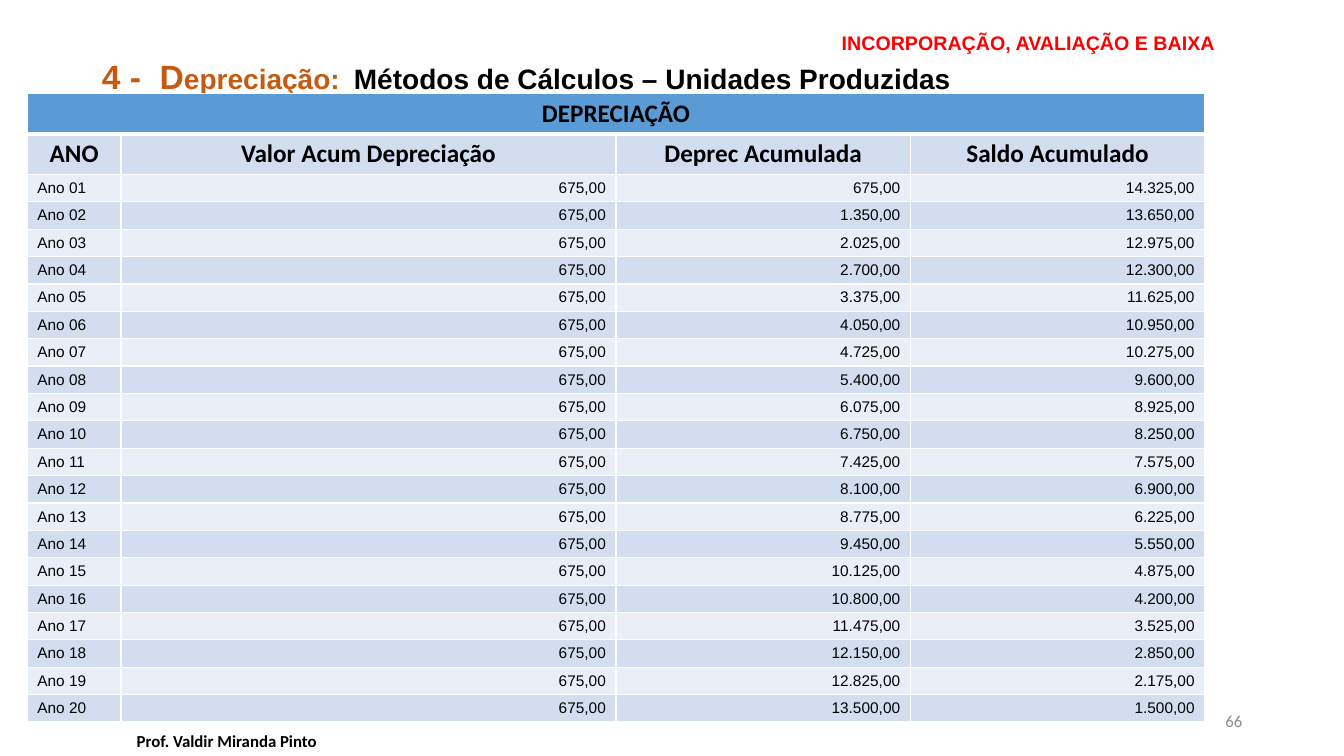
from collections import namedtuple
from dataclasses import dataclass

from lxml.etree import SubElement
from pptx import Presentation
from pptx.dml.color import RGBColor
from pptx.enum.text import MSO_ANCHOR as Anchor, MSO_AUTO_SIZE as AutoSize, PP_ALIGN as Align
from pptx.oxml.ns import qn
from pptx.util import Inches, Pt

Box = namedtuple("Box", "left top width height")


@dataclass(frozen=True)
class Theme:
    """Colours, fonts and type sizes of the deck."""
    heading: str = "Arial"
    body: str = "Calibri"
    red: str = "FF0000"
    orange: str = "C55A11"
    black: str = "000000"
    grey: str = "8C8C8C"
    white: str = "FFFFFF"
    blue: str = "5B9BD5"
    band_dark: str = "D2DEEF"
    band_light: str = "EAEFF7"
    initial: int = 24
    subtitle: int = 20
    table_head: int = 18
    title: int = 14
    small: int = 12
    table_body: int = 11


THEME = Theme()
COLUMNS = ["ANO", "Valor Acum Depreciação", "Deprec Acumulada", "Saldo Acumulado"]
COLUMN_WIDTHS = [0.93, 4.91, 2.92, 2.92]
YEARS = 20
ASSET_VALUE = 15000
YEARLY_DEPRECIATION = 675


def add_text(para, text, *, size, font=THEME.body, color=THEME.black, bold=False, align=None):
    """Add a formatted span of text to a paragraph."""
    if align is not None:
        para.alignment = align
    span = para.add_run()
    span.text = text
    span.font.name = font
    span.font.size = Pt(size)
    span.font.bold = bold
    span.font.color.rgb = RGBColor.from_string(color)


def place(shape, box, anchor):
    """Move a text shape to its box and return its first paragraph."""
    shape.left, shape.top, shape.width, shape.height = map(Inches, box)
    frame = shape.text_frame
    frame.word_wrap = True
    frame.auto_size = AutoSize.NONE
    frame.vertical_anchor = anchor
    return frame.paragraphs[0]


def build_title(page, box):
    """Fill the title placeholder at the top right."""
    para = place(page.shapes.title, box, Anchor.MIDDLE)
    para.line_spacing = 0.9
    add_text(para, "INCORPORAÇÃO, AVALIAÇÃO E BAIXA", size=THEME.title, font=THEME.heading,
             color=THEME.red, bold=True, align=Align.RIGHT)


def build_subtitle(page, box):
    """Fill the body placeholder with the topic and the method."""
    para = place(page.placeholders[1], box, Anchor.TOP)
    props = para._p.get_or_add_pPr()
    props.set("marL", "0")
    props.set("indent", "0")
    SubElement(props, qn("a:buNone"))
    tabs = SubElement(props, qn("a:tabLst"))
    SubElement(tabs, qn("a:tab"), pos=str(Inches(3.06)), algn="l")
    para.line_spacing = 0.9
    para.space_before = Pt(0)
    for text, size, color in [
        ("4 -  D", THEME.initial, THEME.orange),
        ("epreciação:\t", THEME.subtitle, THEME.orange),
        ("Métodos de Cálculos – Unidades Produzidas", THEME.subtitle, THEME.black),
    ]:
        add_text(para, text, size=size, font=THEME.heading, color=color, bold=True,
                 align=Align.LEFT)


def build_label(page, box, text, **style):
    """Add a small text box for the foot of the page."""
    para = place(page.shapes.add_textbox(*map(Inches, box)), box, Anchor.MIDDLE)
    add_text(para, text, size=THEME.small, **style)


def money(value):
    """Format a number in the Brazilian style."""
    return f"{value:,.2f}".translate(str.maketrans(",.", ".,"))


def style_cell(cell, fill, bottom=1):
    """Give a cell its margins, white borders and fill."""
    cell.margin_top = cell.margin_bottom = Inches(0.04)
    cell.vertical_anchor = Anchor.MIDDLE
    props = cell._tc.get_or_add_tcPr()
    for side, width in zip("LRTB", (1, 1, 1, bottom)):
        line = SubElement(props, qn(f"a:ln{side}"), w=str(Pt(width)))
        paint = SubElement(line, qn("a:solidFill"))
        SubElement(paint, qn("a:srgbClr"), val=THEME.white)
    cell.fill.solid()
    cell.fill.fore_color.rgb = RGBColor.from_string(fill)


def build_table(page, box):
    """Add the depreciation schedule."""
    table = page.shapes.add_table(YEARS + 2, len(COLUMNS), *map(Inches, box)).table
    for column, width in zip(table.columns, COLUMN_WIDTHS):
        column.width = Inches(width)
    head_height = 0.4
    for index, row in enumerate(table.rows):
        row.height = Inches(head_height if index < 2 else (box.height - 2 * head_height) / YEARS)

    schedule = [["DEPRECIAÇÃO"] + [""] * 3, COLUMNS]
    for year in range(1, YEARS + 1):
        total = year * YEARLY_DEPRECIATION
        amounts = (YEARLY_DEPRECIATION, total, ASSET_VALUE - total)
        schedule.append([f"Ano {year:02}", *map(money, amounts)])

    table.cell(0, 0).merge(table.cell(0, 3))
    for r, values in enumerate(schedule):
        fill = THEME.blue if r == 0 else THEME.band_dark if r % 2 else THEME.band_light
        for c, value in enumerate(values):
            cell = table.cell(r, c)
            style_cell(cell, fill, bottom=3 if r == 0 else 1)
            if not value:
                continue
            para = cell.text_frame.paragraphs[0]
            if r < 2:
                add_text(para, value, size=THEME.table_head, bold=True, align=Align.CENTER)
            else:
                add_text(para, value, size=THEME.table_body, font=THEME.heading,
                         align=Align.RIGHT if c else Align.LEFT)


def build_page(deck):
    """Add the depreciation slide to the deck."""
    page = deck.slides.add_slide(deck.slide_layouts[1])
    build_title(page, Box(0.8, 0.25, 11.35, 0.38))
    build_subtitle(page, Box(0.91, 0.55, 11.66, 0.7))
    build_label(page, Box(0, 7.22, 4.5, 0.26), "Prof. Valdir Miranda Pinto",
                bold=True, align=Align.CENTER)
    build_label(page, Box(9.42, 6.95, 3, 0.4), "66", color=THEME.grey, align=Align.RIGHT)
    build_table(page, Box(0.27, 0.93, sum(COLUMN_WIDTHS), 6.24))


def main():
    """Build and save the deck."""
    deck = Presentation()
    deck.slide_width, deck.slide_height = Inches(13.33), Inches(7.5)
    build_page(deck)
    deck.save("out.pptx")


if __name__ == "__main__":
    main()
